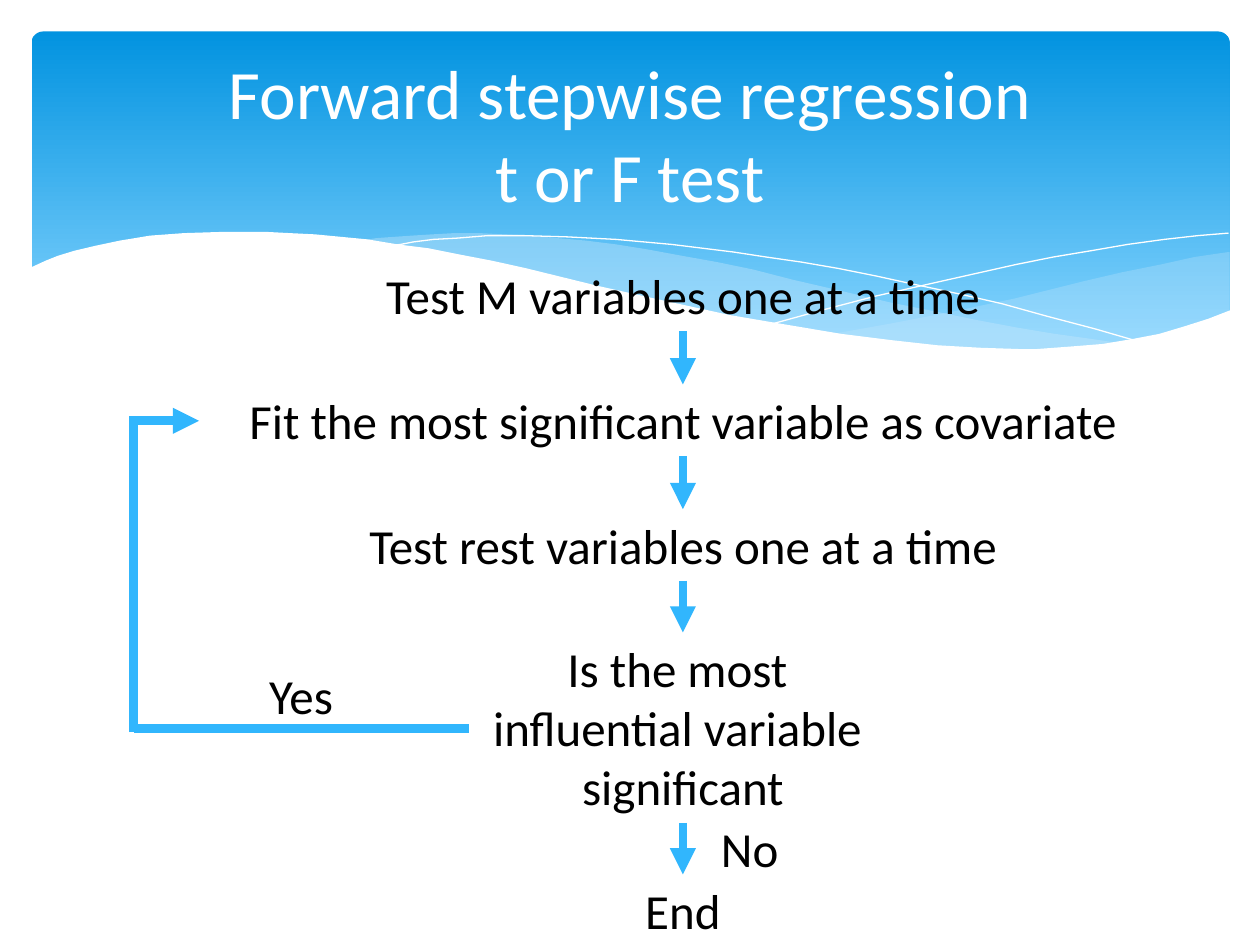
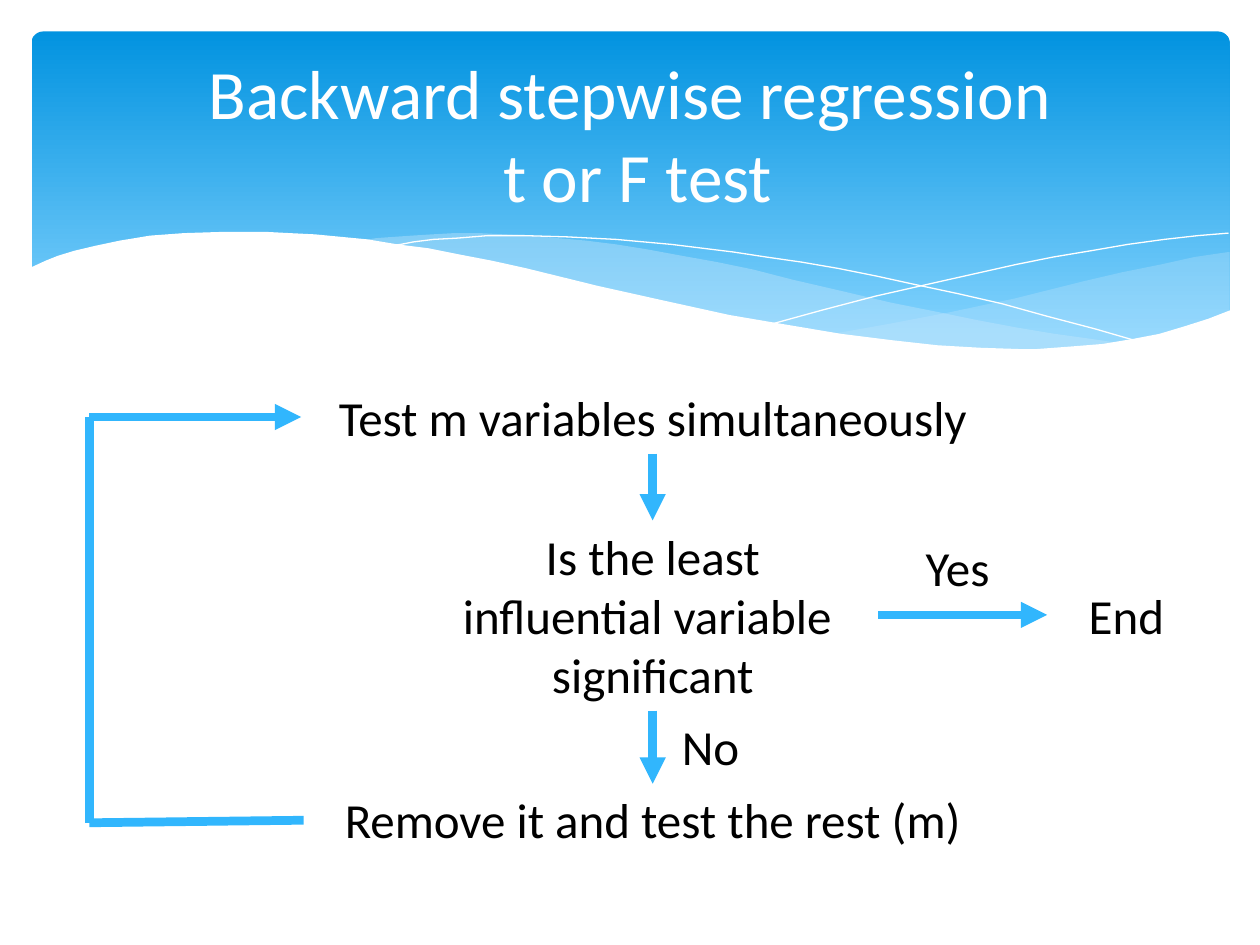
from pptx import Presentation
from pptx.dml.color import RGBColor
from pptx.enum.shapes import MSO_CONNECTOR, MSO_SHAPE
from pptx.enum.text import MSO_ANCHOR, MSO_AUTO_SIZE, PP_ALIGN
from pptx.oxml.ns import qn
from pptx.util import Inches, Pt
from lxml import etree

STRAIGHT = MSO_CONNECTOR.STRAIGHT
ROUNDED = MSO_SHAPE.ROUNDED_RECTANGLE
MIDDLE, TOP = MSO_ANCHOR.MIDDLE, MSO_ANCHOR.TOP
GROW, FIXED = MSO_AUTO_SIZE.SHAPE_TO_FIT_TEXT, MSO_AUTO_SIZE.NONE
CENTER = PP_ALIGN.CENTER

COLORS = {
    "band_top": "0293E0",
    "band_bottom": "83D3FE",
    "wave": "C6E7FC",
    "arrow": "31B6FD",
    "white": "FFFFFF",
    "black": "000000",
}
FONT = "Calibri"
TITLE_SIZE, BODY_SIZE = 39.6, 28
LABEL_WIDTH = 1.26
BOX_HEIGHTS = {1: 0.57, 3: 1.51}  # by number of text lines

# Outlines of the waves under the title band, in inches
RIGHT_WAVE = [
    (9.75, 2), (9.48, 2.04), (9.21, 2.1), (8.91, 2.16), (8.61, 2.23),
    (8.05, 2.37), (7.53, 2.48), (7.06, 2.57), (6.61, 2.65), (6.91, 2.69),
    (7.19, 2.72), (7.45, 2.75), (7.69, 2.77), (8.03, 2.78), (8.35, 2.77),
    (8.63, 2.75), (8.89, 2.72), (9.13, 2.67), (9.35, 2.62), (9.49, 2.57),
    (9.63, 2.52), (9.76, 2.47), (9.76, 2),
]
MIDDLE_WAVE = [
    (8.93, 2.73), (8.66, 2.69), (8.37, 2.65), (8.07, 2.6), (7.75, 2.54),
    (7.41, 2.47), (7.06, 2.4), (6.68, 2.31), (6.29, 2.22), (5.98, 2.14),
    (5.69, 2.08), (5.41, 2.03), (5.14, 1.98), (4.89, 1.94), (4.65, 1.91),
    (4.42, 1.89), (4.2, 1.87), (3.99, 1.86), (3.8, 1.85), (3.61, 1.85),
    (3.44, 1.86), (3.28, 1.87), (3.13, 1.88), (2.99, 1.89), (2.86, 1.91),
    (3.23, 1.96), (3.62, 2.03), (4.04, 2.11), (4.49, 2.22), (4.91, 2.32),
    (5.3, 2.4), (5.66, 2.48), (6.01, 2.55), (6.34, 2.61), (6.65, 2.66),
    (6.95, 2.7), (7.22, 2.74), (7.48, 2.76), (7.73, 2.77), (7.96, 2.78),
    (8.28, 2.78), (8.57, 2.77), (8.76, 2.75),
]
FALLING_LINE = [
    (3.09, 1.95), (3.18, 1.94), (3.28, 1.92), (3.44, 1.9), (3.63, 1.89),
    (3.87, 1.87), (4.16, 1.87), (4.5, 1.88), (4.89, 1.9), (5.33, 1.94),
    (5.82, 2), (6.08, 2.04), (6.36, 2.08), (6.65, 2.13), (6.95, 2.19),
    (7.27, 2.26), (7.6, 2.33), (7.95, 2.41), (8.31, 2.51), (8.69, 2.61),
    (9.07, 2.72),
]
RISING_LINE = [
    (6.13, 2.57), (6.53, 2.46), (6.95, 2.35), (7.48, 2.23), (8.06, 2.1),
    (8.36, 2.04), (8.66, 1.99), (8.95, 1.94), (9.24, 1.9), (9.51, 1.87),
    (9.75, 1.85),
]
WHITE_WAVE = [
    (9.77, 2.46), (9.59, 2.53), (9.4, 2.59), (9.2, 2.65), (8.99, 2.69),
    (8.75, 2.73), (8.5, 2.75), (8.23, 2.77), (8.09, 2.77), (7.78, 2.76),
    (7.44, 2.74), (7.08, 2.7), (6.68, 2.65), (6.26, 2.58), (5.79, 2.5),
    (5.29, 2.39), (4.75, 2.27), (4.18, 2.13), (3.91, 2.07), (3.65, 2.02),
    (3.4, 1.97), (3.16, 1.94), (2.92, 1.9), (2.71, 1.88), (2.5, 1.86),
    (2.3, 1.85), (2.11, 1.84), (1.77, 1.84), (1.46, 1.85), (1.19, 1.87),
    (0.95, 1.91), (0.76, 1.95), (0.59, 1.99), (0.46, 2.03), (0.36, 2.07),
    (0.23, 2.13), (0.23, 3.29), (9.77, 3.29),
]


class FlowDeck:
    """Holds the shared style and the slide being drawn."""

    def __init__(self):
        self.deck = Presentation()
        self.deck.slide_width = Inches(10)
        self.deck.slide_height = Inches(7.5)
        self.slide = None

    def color(self, name):
        return RGBColor.from_string(COLORS[name])

    def new_slide(self, title_lines):
        self.slide = self.deck.slides.add_slide(self.deck.slide_layouts[6])
        self.band()
        self.title(title_lines)

    def band(self):
        band = self.slide.shapes.add_shape(
            ROUNDED, Inches(0.25), Inches(0.25), Inches(9.51), Inches(2.7))
        band.adjustments[0] = 0.034
        band.shadow.inherit = False
        band.line.fill.background()
        band.fill.gradient()
        band.fill.gradient_angle = 270
        stops = zip(band.fill.gradient_stops,
                    (("band_top", 0), ("band_bottom", 0.9)))
        for stop, (name, position) in stops:
            stop.color.rgb = self.color(name)
            stop.position = position
        self.wave(RIGHT_WAVE, "wave", 29)
        self.wave(MIDDLE_WAVE, "wave", 40)
        self.curve(FALLING_LINE)
        self.curve(RISING_LINE)
        self.wave(WHITE_WAVE, "white")

    def outline(self, points, close):
        corners = [(Inches(x), Inches(y)) for x, y in points]
        builder = self.slide.shapes.build_freeform(*corners[0])
        builder.add_line_segments(corners[1:], close=close)
        shape = builder.convert_to_shape()
        shape.shadow.inherit = False
        return shape

    def wave(self, points, name, opacity=100):
        shape = self.outline(points, True)
        shape.line.fill.background()
        shape.fill.solid()
        shape.fill.fore_color.rgb = self.color(name)
        if opacity < 100:
            tint = shape.fill._xPr.find(".//" + qn("a:srgbClr"))
            etree.SubElement(tint, qn("a:alpha"), val=str(opacity * 1000))

    def curve(self, points):
        shape = self.outline(points, False)
        shape.fill.background()
        shape.line.color.rgb = self.color("white")
        shape.line.width = Pt(0)

    def text_box(self, left, top, width, height, anchor, auto_size):
        box = self.slide.shapes.add_textbox(
            Inches(left), Inches(top), Inches(width), Inches(height))
        frame = box.text_frame
        frame.word_wrap = True
        frame.vertical_anchor = anchor
        frame.auto_size = auto_size
        return frame

    def span(self, para, text, size, name):
        span = para.add_run()
        span.text = text
        span.font.name = FONT
        span.font.size = Pt(size)
        span.font.color.rgb = self.color(name)

    def title(self, lines):
        frame = self.text_box(0.5, 0.37, 9, 1.37, MIDDLE, FIXED)
        para = frame.paragraphs[0]
        para.alignment = CENTER
        for index, line in enumerate(lines):
            if index:
                para.add_line_break()
            self.span(para, line, TITLE_SIZE, "white")

    def text(self, lines, left, top, width=LABEL_WIDTH):
        height = BOX_HEIGHTS[len(lines)]
        frame = self.text_box(left, top, width, height, TOP, GROW)
        for index, line in enumerate(lines):
            para = frame.add_paragraph() if index else frame.paragraphs[0]
            para.alignment = CENTER
            self.span(para, line, BODY_SIZE, "black")

    def connector(self, start, end, arrow=False):
        ends = [Inches(value) for value in (*start, *end)]
        link = self.slide.shapes.add_connector(STRAIGHT, *ends)
        link.line.color.rgb = self.color("arrow")
        link.line.width = Pt(5)
        if arrow:
            line = link.line._get_or_add_ln()
            etree.SubElement(line, qn("a:tailEnd"), type="triangle")
        etree.SubElement(link._element.spPr, qn("a:effectLst"))

    def flow(self, center, steps):
        """Stack centred steps and join each to the next with an arrow."""
        bottom = None
        for lines, top, width in steps:
            self.text(lines, center - width / 2, top, width)
            if bottom is not None:
                self.connector((center, bottom), (center, top), True)
            bottom = top + BOX_HEIGHTS[len(lines)]


def forward_slide(page):
    page.new_slide(["Forward stepwise regression", "t or F test"])
    page.flow(5.42, [
        (["Test M variables one at a time"], 2.06, 5.17),
        (["Fit the most significant variable as covariate"], 3.05, 7.67),
        (["Test rest variables one at a time"], 4.04, 5.58),
        (["Is the most ", "influential variable ", "significant"], 5.02, 3.39),
        (["End"], 6.94, LABEL_WIDTH),
    ])
    # Loop back to the fitting step
    page.connector((1.06, 3.34), (1.58, 3.34), True)
    page.connector((1.06, 5.81), (1.06, 3.3))
    page.connector((1.06, 5.78), (3.72, 5.78))
    page.text(["Yes"], 1.76, 5.23)
    page.text(["No"], 5.32, 6.45)


def backward_slide(page):
    page.new_slide(["Backward stepwise regression", " t or F test"])
    page.flow(5.18, [
        (["Test m variables simultaneously"], 3.03, 5.58),
        (["Is the least", "influential variable ", "significant"], 4.13, 3.59),
        (["Remove it and test the rest (m)"], 6.22, 5.53),
    ])
    # Exit to the end
    page.text(["End"], 8.31, 4.6)
    page.connector((6.97, 4.88), (8.31, 4.88), True)
    # Loop back to the first test
    page.connector((0.71, 3.31), (2.39, 3.31), True)
    page.connector((0.71, 6.53), (0.71, 3.31))
    page.connector((0.71, 6.53), (2.41, 6.51))
    page.text(["Yes"], 6.97, 4.22)
    page.text(["No"], 5.01, 5.64)


def main():
    page = FlowDeck()
    forward_slide(page)
    backward_slide(page)
    page.deck.save("out.pptx")


if __name__ == "__main__":
    main()
